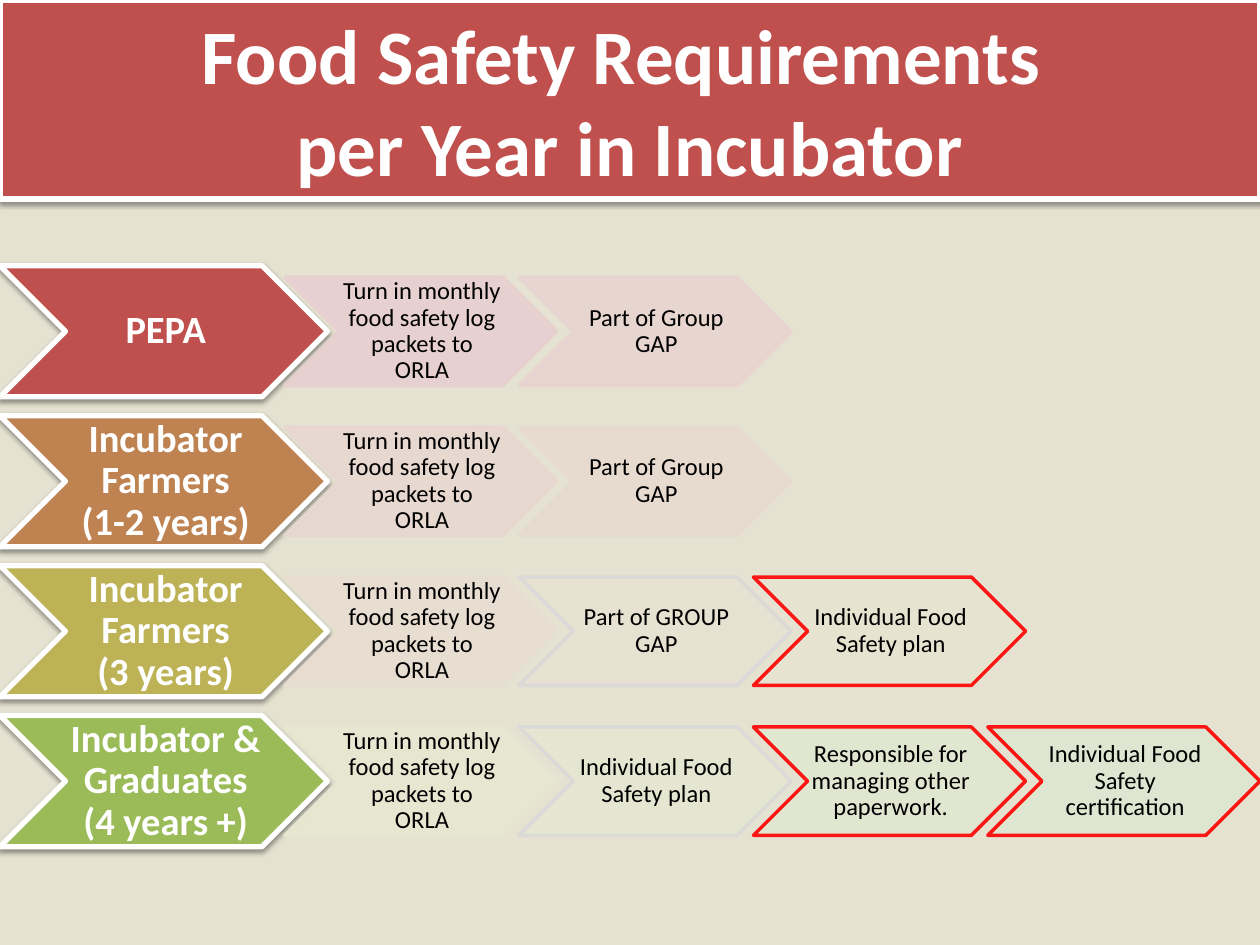
from lxml.etree import SubElement
from pptx import Presentation
from pptx.dml.color import RGBColor
from pptx.enum.shapes import MSO_SHAPE
from pptx.enum.text import MSO_ANCHOR, PP_ALIGN
from pptx.oxml.ns import qn
from pptx.util import Inches, Pt

WHITE = RGBColor(0xFF, 0xFF, 0xFF)
BLACK = RGBColor(0x00, 0x00, 0x00)
SAND = RGBColor(0xE5, 0xE2, 0xD1)
BRICK = RGBColor(0xC0, 0x50, 0x4D)
OCHRE = RGBColor(0xBE, 0x83, 0x51)
OLIVE = RGBColor(0xBD, 0xB2, 0x55)
GREEN = RGBColor(0x9B, 0xBB, 0x59)
GREY = RGBColor(0xD9, 0xD9, 0xD9)
RED = RGBColor(0xFF, 0x00, 0x00)

TOP, ROW = 2.11, 1.19
HEAD_W, HEAD_H = 2.6, 1.04
LEFT, COL = 2.26, 1.86
STEP_W, STEP_H = 2.16, 0.86

LOG = "Turn in monthly food safety log packets to ORLA"
PLAN = "Individual Food Safety plan"

# Each row: label, colour, steps as (text, fill, line or None for the fill colour)
ROWS = [
    ("PEPA", BRICK, [
        (LOG, RGBColor(0xE8, 0xD0, 0xD0), None),
        ("Part of Group GAP", RGBColor(0xE8, 0xD4, 0xD0), None)]),
    ("Incubator\vFarmers\v(1-2 years)", OCHRE, [
        (LOG, RGBColor(0xE8, 0xD7, 0xD0), None),
        ("Part of Group GAP", RGBColor(0xE8, 0xDB, 0xD0), None)]),
    ("Incubator\vFarmers\v(3 years)", OLIVE, [
        (LOG, RGBColor(0xE8, 0xDE, 0xD1), None),
        ("Part of GROUP GAP", RGBColor(0xE8, 0xE1, 0xD1), GREY),
        (PLAN, RGBColor(0xE8, 0xE4, 0xD1), RED)]),
    ("Incubator &\vGraduates\v(4 years +)", GREEN, [
        (LOG, RGBColor(0xE7, 0xE7, 0xD1), None),
        (PLAN, RGBColor(0xE4, 0xE7, 0xD1), GREY),
        ("Responsible for managing other paperwork.",
         RGBColor(0xE1, 0xE7, 0xD1), RED),
        ("Individual Food Safety certification",
         RGBColor(0xDE, 0xE7, 0xD1), RED)]),
]


def style(sp, text, size, color, fill, line, width, raised):
    """Fill, outline and label a shape; raised ones are bold and cast a shadow."""
    sp.shadow.inherit = False
    sp.fill.solid()
    sp.fill.fore_color.rgb = fill
    sp.line.color.rgb = line
    sp.line.width = Pt(width)
    tf = sp.text_frame
    tf.text = text
    tf.word_wrap = True
    tf.vertical_anchor = MSO_ANCHOR.MIDDLE
    p = tf.paragraphs[0]
    p.alignment = PP_ALIGN.CENTER
    p.font.name = "Calibri"
    p.font.size = Pt(size)
    p.font.bold = raised
    p.font.color.rgb = color
    if raised:
        effects = sp._element.spPr.find(qn("a:effectLst"))
        shadow = SubElement(effects, qn("a:outerShdw"), blurRad=str(Pt(3.1)),
                            dist=str(Pt(1.6)), dir="5400000", rotWithShape="0")
        tint = SubElement(shadow, qn("a:srgbClr"), val="000000")
        SubElement(tint, qn("a:alpha"), val="38000")
    else:
        for tint in sp._element.spPr.iter(qn("a:srgbClr")):
            SubElement(tint, qn("a:alpha"), val="90000")


def add_chevron(s, x, middle, w, h, inset, *look):
    sp = s.shapes.add_shape(MSO_SHAPE.CHEVRON, Inches(x), Inches(middle - h / 2),
                            Inches(w), Inches(h))
    style(sp, *look)
    tf = sp.text_frame
    tf.margin_left, tf.margin_right = Inches(inset), 0
    tf.margin_top = tf.margin_bottom = Inches(inset / 2)
    tf.paragraphs[0].line_spacing = 0.9


prs = Presentation()
prs.slide_width, prs.slide_height = Inches(10), Inches(7.5)
s = prs.slides.add_slide(prs.slide_layouts[5])
s.background.fill.solid()
s.background.fill.fore_color.rgb = SAND

title = s.shapes.title
title.left, title.top = 0, 0
title.width, title.height = prs.slide_width, Inches(1.58)
style(title, "Food Safety Requirements \vper Year in Incubator", 44, WHITE,
      BRICK, WHITE, 3, True)

for i, (label, color, steps) in enumerate(ROWS):
    middle = TOP + i * ROW + HEAD_H / 2
    add_chevron(s, 0, middle, HEAD_W, HEAD_H, 0.03,
                label, 22, WHITE, color, WHITE, 3, True)
    for j, (text, fill, line) in enumerate(steps):
        add_chevron(s, LEFT + j * COL, middle, STEP_W, STEP_H, 0.02,
                    text, 14, BLACK, fill, line or fill, 2, False)

prs.save("out.pptx")
